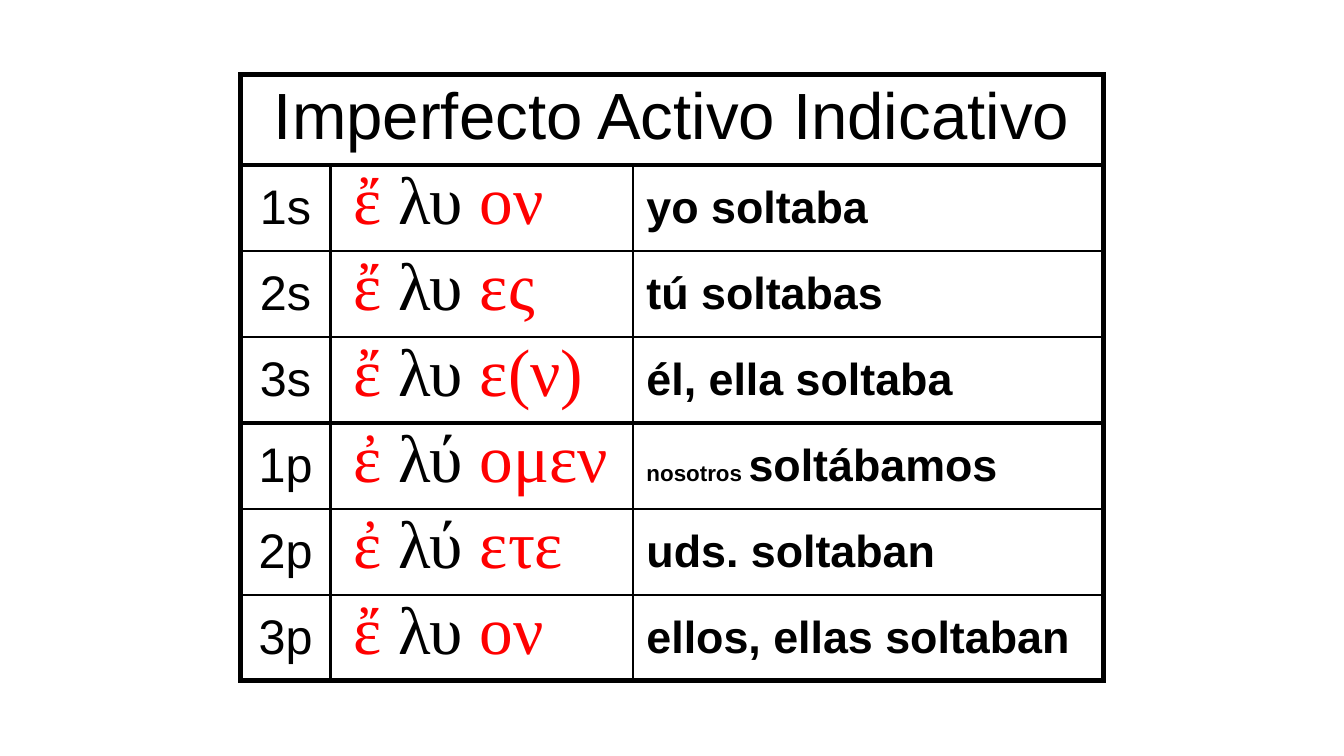
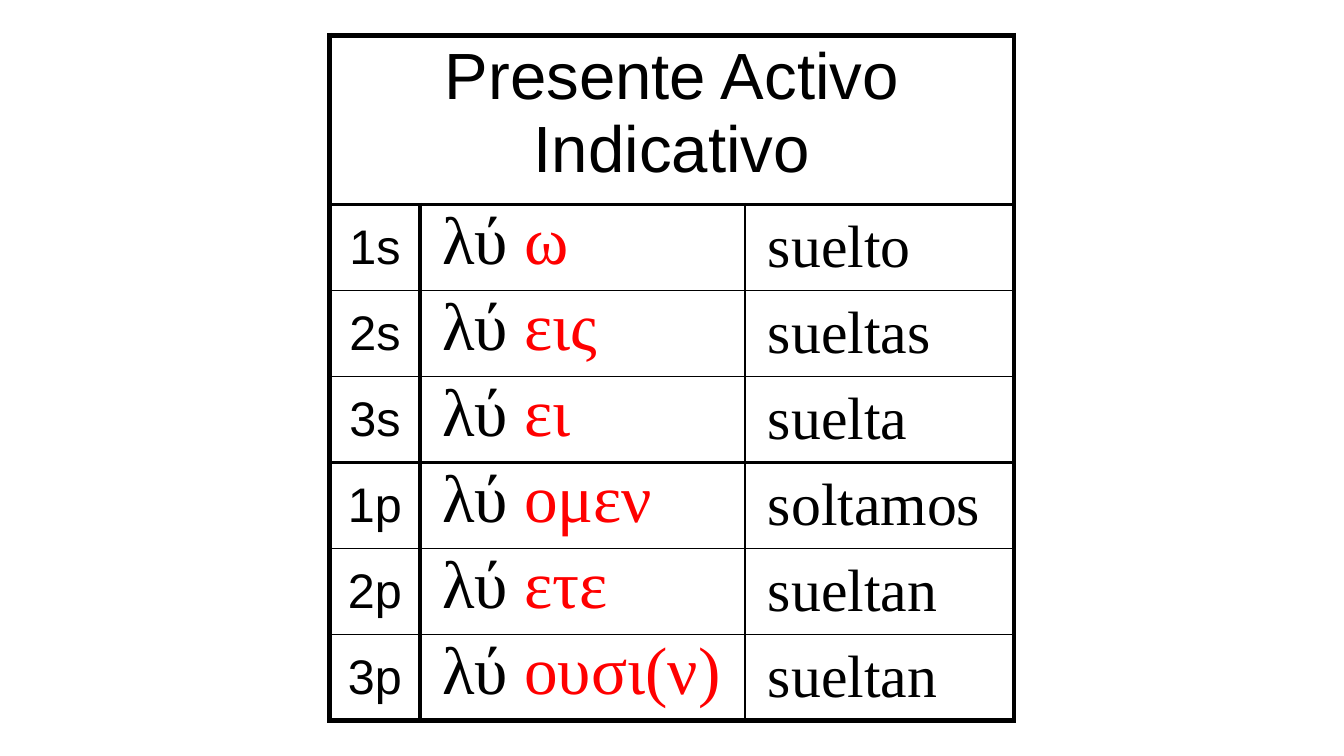
from dataclasses import dataclass

from lxml import etree
from pptx import Presentation
from pptx.dml.color import RGBColor
from pptx.enum.text import MSO_ANCHOR, PP_ALIGN
from pptx.oxml.ns import qn
from pptx.util import Inches, Pt

LEFT, CENTER = PP_ALIGN.LEFT, PP_ALIGN.CENTER
TOP, MIDDLE = MSO_ANCHOR.TOP, MSO_ANCHOR.MIDDLE


@dataclass(frozen=True)
class Theme:
    """Colours, fonts, type sizes, line widths and lengths that the slides share."""
    ink: str = "000000"
    ending: str = "FF0000"
    sans: str = "Arial"
    serif: str = "Times New Roman"
    title: int = 35
    label: int = 26
    greek: int = 36
    meaning_sans: int = 24
    meaning_serif: int = 32
    small: int = 12
    outer: int = 3
    group: int = 2
    inner: int = 1
    page_width: float = 10
    page_height: float = 10 * 9 / 16
    verb_row: float = 0.64


THEME = Theme()
WIDE = {"margin_left": Inches(0.1), "margin_right": Inches(0.1),
        "margin_top": Inches(0.04), "margin_bottom": Inches(0.04)}
TIGHT = {"margin_left": Inches(0.07), "margin_right": Inches(0.07),
         "margin_top": 0, "margin_bottom": 0}
HANGING = (0.38, -0.38)
FIRST_LINE = (0, 0.1)


@dataclass(frozen=True)
class CellStyle:
    """The look of one kind of table cell."""
    font: str
    size: int
    bold: bool = False
    align: int = LEFT
    anchor: int = MIDDLE
    indent: tuple = HANGING
    margins: tuple = tuple(WIDE.items())


TITLE = CellStyle(THEME.sans, THEME.title, align=CENTER, anchor=TOP, indent=(0, 0))
LABEL = CellStyle(THEME.sans, THEME.label, align=CENTER)
GREEK = CellStyle(THEME.serif, THEME.greek, anchor=TOP, indent=FIRST_LINE,
                  margins=tuple(TIGHT.items()))
BOLD_MEANING = CellStyle(THEME.sans, THEME.meaning_sans, bold=True)
SERIF_MEANING = CellStyle(THEME.serif, THEME.meaning_serif, indent=FIRST_LINE,
                          margins=tuple(TIGHT.items()))

LABELS = ("1s", "2s", "3s", "1p", "2p", "3p")
GROUP_EDGES = (1, 4)
IMPERFECT = (
    ("ἔ", "λυ", "ον", "yo soltaba"),
    ("ἔ", "λυ", "ες", "tú soltabas"),
    ("ἔ", "λυ", "ε(ν)", "él, ella soltaba"),
    ("ἐ", "λύ", "ομεν", "nosotros |soltábamos"),
    ("ἐ", "λύ", "ετε", "uds. soltaban"),
    ("ἔ", "λυ", "ον", "ellos, ellas soltaban"),
)
PRESENT = (
    ("", "λύ", "ω", "suelto"),
    ("", "λύ", "εις", "sueltas"),
    ("", "λύ", "ει", "suelta"),
    ("", "λύ", "ομεν", "soltamos"),
    ("", "λύ", "ετε", "sueltan"),
    ("", "λύ", "ουσι(ν)", "sueltan"),
)


def set_values(target, values):
    """Set each named attribute of the target."""
    for name, value in values.items():
        setattr(target, name, value)


def write_cell(cell, style, spans):
    """Fill a cell with (text, colour, size) spans in one style."""
    set_values(cell, {**dict(style.margins), "vertical_anchor": style.anchor})
    cell.text_frame.word_wrap = True
    para = cell.text_frame.paragraphs[0]
    para.alignment = style.align
    margin, indent = style.indent
    properties = para._p.get_or_add_pPr()
    properties.set("marL", str(Inches(margin)))
    properties.set("indent", str(Inches(indent)))
    for text, color, size in spans:
        span = para.add_run()
        span.text = text
        set_values(span.font, {"name": style.font, "size": Pt(size), "bold": style.bold})
        span.font.color.rgb = RGBColor.from_string(color)


def plain(text, style):
    """Return the text as a single ink-coloured span."""
    return [(text, THEME.ink, style.size)]


def greek_spans(augment, stem, ending):
    """Colour the augment and ending of a verb and leave its stem in ink."""
    parts = ((f"{augment} ", THEME.ending), (f"{stem} ", THEME.ink), (ending, THEME.ending))
    return [(text, color, GREEK.size) for text, color in parts if text.strip()]


def meaning_spans(text, style):
    """Set any pronoun before the bar in small type."""
    pronoun, _, verb = text.rpartition("|")
    small = [(pronoun, THEME.ink, THEME.small)] if pronoun else []
    return small + plain(verb, style)


def border_cell(cell, widths):
    """Draw the left, right, top and bottom borders of a cell."""
    cell.fill.background()
    properties = cell._tc.get_or_add_tcPr()
    for index, (side, width) in enumerate(zip("LRTB", widths)):
        line = etree.Element(qn(f"a:ln{side}"), w=str(Pt(width)))
        fill = etree.SubElement(line, qn("a:solidFill"))
        etree.SubElement(fill, qn("a:srgbClr"), val=THEME.ink)
        properties.insert(index, line)


def border_table(table):
    """Rule the table with a heavy frame, medium group lines and thin inner lines."""
    row_count, column_count = len(table.rows), len(table.columns)
    across = [THEME.outer] + [THEME.group if edge in GROUP_EDGES else THEME.inner
                              for edge in range(1, row_count)] + [THEME.outer]
    down = (THEME.outer, THEME.group, THEME.inner, THEME.outer)
    for row in range(row_count):
        for column in range(column_count):
            sides = down[column:column + 2] if row else (THEME.outer, THEME.outer)
            border_cell(table.cell(row, column), (*sides, *across[row:row + 2]))


def add_verb_slide(deck, title, verbs, columns, height, meaning_style):
    """Add a slide with one centred conjugation table."""
    page = deck.slides.add_slide(deck.slide_layouts[6])
    width = sum(columns)
    box = page.shapes.add_table(
        len(verbs) + 1, len(columns),
        Inches((THEME.page_width - width) / 2), Inches((THEME.page_height - height) / 2),
        Inches(width), Inches(height))
    table = box.table
    set_values(table, {"first_row": False, "horz_banding": False})
    for column, size in zip(table.columns, columns):
        column.width = Inches(size)
    title_row = height - len(verbs) * THEME.verb_row
    for index, row in enumerate(table.rows):
        row.height = Inches(THEME.verb_row if index else title_row)
    table.cell(0, 0).merge(table.cell(0, len(columns) - 1))
    write_cell(table.cell(0, 0), TITLE, plain(title, TITLE))
    for row, (label, verb) in enumerate(zip(LABELS, verbs), 1):
        *greek, meaning = verb
        write_cell(table.cell(row, 0), LABEL, plain(label, LABEL))
        write_cell(table.cell(row, 1), GREEK, greek_spans(*greek))
        write_cell(table.cell(row, 2), meaning_style, meaning_spans(meaning, meaning_style))
    border_table(table)


def main():
    """Build the two conjugation slides and save the deck."""
    deck = Presentation()
    set_values(deck, {"slide_width": Inches(THEME.page_width),
                      "slide_height": Inches(THEME.page_height)})
    add_verb_slide(deck, "Imperfecto Activo Indicativo", IMPERFECT,
                   (0.67, 2.25, 3.5), 4.51, BOLD_MEANING)
    add_verb_slide(deck, "Presente Activo Indicativo", PRESENT,
                   (0.67, 2.42, 2), 5.1, SERIF_MEANING)
    deck.save("out.pptx")


if __name__ == "__main__":
    main()
